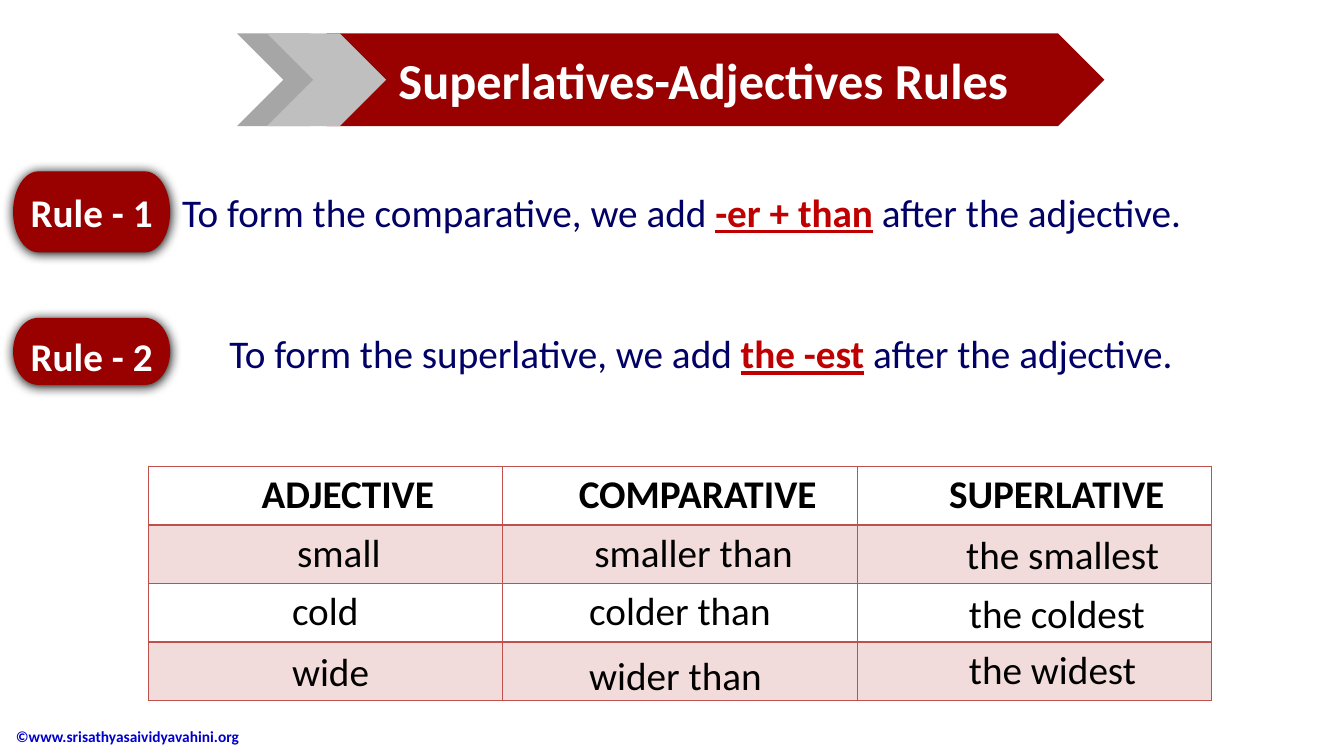
"""Build a slide on the rules for comparative and superlative adjectives."""
from lxml.etree import SubElement
from pptx import Presentation
from pptx.dml.color import RGBColor
from pptx.enum.shapes import MSO_SHAPE as Shape
from pptx.enum.text import MSO_ANCHOR as Anchor, PP_ALIGN as Align
from pptx.oxml.ns import qn
from pptx.util import Cm, Pt

COLORS = {"red": "990000", "accent": "C00000", "navy": "000066", "link": "0000CC",
          "white": "FFFFFF", "black": "000000", "border": "C0504D", "band": "F2DCDB",
          "gray": "A6A6A6", "silver": "BFBFBF"}
TITLE = "Superlatives-Adjectives Rules"
CREDIT = "©www.srisathyasaividyavahini.org"
RULES = [
    {"label": "Rule - 1", "badge": (4.32, 2.04), "text": (4.34, 4.62, 29.6),
     "parts": ["To form the comparative, we add ", "-er + than", " after the adjective."]},
    {"label": "Rule - 2", "badge": (8.01, 1.69), "text": (5.53, 8.18, 27.2),
     "parts": ["To form the superlative, we add ", "the -est", " after the adjective."]},
]
HEADERS = [("ADJECTIVE", 1.37), ("COMPARATIVE", 1.14), ("SUPERLATIVE", 1.37)]
WORD_ROWS = [
    [("small", 7.24, 13.18), ("smaller than", 14.73, 13.18), ("the smallest", 24.1, 13.24)],
    [("cold", 7.11, 14.64), ("colder than", 14.6, 14.64), ("the coldest", 24.17, 14.73)],
    [("wide", 7.11, 16.19), ("wider than", 14.6, 16.28), ("the widest", 24.17, 16.14)],
]
WORD_WIDTHS = [3.12, 5.66, 5.66]
TEXT_HEIGHT = 1.45
BANNER = [(Shape.CHEVRON, 5.97, 3, "gray"), (Shape.PENTAGON, 8.23, 19.6, "red"),
          (Shape.CHEVRON, 6.73, 3, "silver")]
BANNER_TOP, BANNER_HEIGHT = 0.84, 2.34
BODY = {"name": "Calibri", "size": Pt(28)}
BOLD = {**BODY, "bold": True}


def add_run(paragraph, text, color, style):
    run = paragraph.add_run()
    run.text = text
    for name, value in style.items():
        setattr(run.font, name, value)
    run.font.color.rgb = RGBColor.from_string(COLORS[color])


def add_text(slide, left, top, width, height, runs):
    box = slide.shapes.add_textbox(Cm(left), Cm(top), Cm(width), Cm(height))
    box.text_frame.word_wrap = True
    for run in runs:
        add_run(box.text_frame.paragraphs[0], *run)


def add_block(slide, kind, left, top, width, height, color):
    shape = slide.shapes.add_shape(kind, Cm(left), Cm(top), Cm(width), Cm(height))
    shape.shadow.inherit = False
    shape.fill.solid()
    shape.fill.fore_color.rgb = RGBColor.from_string(COLORS[color])
    shape.line.fill.background()
    return shape


def add_badge(slide, label, top, height):
    badge = add_block(slide, Shape.FLOWCHART_TERMINATOR, 0.33, top, 3.96, height, "red")
    effects = badge._element.spPr.find(qn("a:effectLst"))
    shadow = SubElement(effects, qn("a:outerShdw"), blurRad=str(Pt(8.5)),
                        dist=str(Pt(1)), dir="5400000", algn="ctr", rotWithShape="0")
    SubElement(shadow, qn("a:srgbClr"), val=COLORS["black"])
    frame = badge.text_frame
    frame.word_wrap = False
    frame.vertical_anchor = Anchor.TOP
    frame.paragraphs[0].alignment = Align.CENTER
    add_run(frame.paragraphs[0], label, "white", BOLD)


def set_borders(cell, widths):
    properties = cell._tc.get_or_add_tcPr()
    for position, (side, width) in enumerate(widths.items()):
        line = SubElement(properties, qn(f"a:{side}"), w=str(Pt(width)))
        properties.insert(position, line)
        SubElement(SubElement(line, qn("a:solidFill")), qn("a:srgbClr"), val=COLORS["border"])


def add_grid(slide):
    row_count = len(WORD_ROWS) + 1
    frame = slide.shapes.add_table(row_count, len(HEADERS), Cm(3.74), Cm(11.75),
                                   Cm(26.8), Cm(5.9))
    table = frame.table
    table.first_row = table.horz_banding = False
    for row in range(row_count):
        for column in range(len(HEADERS)):
            cell = table.cell(row, column)
            if row % 2:
                cell.fill.solid()
                cell.fill.fore_color.rgb = RGBColor.from_string(COLORS["band"])
            else:
                cell.fill.background()
            set_borders(cell, {"lnL": 1, "lnR": 1, "lnT": 2 if row == 1 else 1,
                               "lnB": 2 if row == 0 else 1})
    for column, (header, indent) in enumerate(HEADERS):
        cell = table.cell(0, column)
        cell.margin_left = Cm(indent)
        paragraph = cell.text_frame.paragraphs[0]
        paragraph.alignment = Align.CENTER
        add_run(paragraph, header, "black", BOLD)


def add_words(slide):
    for words in WORD_ROWS:
        for (word, left, top), width in zip(words, WORD_WIDTHS):
            add_text(slide, left, top, width, TEXT_HEIGHT, [(word, "black", BODY)])


def add_title(slide):
    for kind, left, width, color in BANNER:
        add_block(slide, kind, left, BANNER_TOP, width, BANNER_HEIGHT, color)
    title = slide.shapes.title
    title.left, title.top = Cm(8.22), Cm(BANNER_TOP)
    title.width, title.height = Cm(19.02), Cm(BANNER_HEIGHT)
    title.text_frame.vertical_anchor = Anchor.MIDDLE
    title.text_frame.paragraphs[0].alignment = Align.CENTER
    add_run(title.text_frame.paragraphs[0], TITLE, "white", {**BOLD, "size": Pt(36)})
    slide.shapes._spTree.append(title._element)


def main():
    presentation = Presentation()
    presentation.slide_width, presentation.slide_height = Cm(33.87), Cm(19.05)
    slide = presentation.slides.add_slide(presentation.slide_layouts[5])
    add_title(slide)
    for rule in RULES:
        add_badge(slide, rule["label"], *rule["badge"])
        before, ending, after = rule["parts"]
        add_text(slide, *rule["text"], TEXT_HEIGHT, [
            (before, "navy", BODY), (ending, "accent", {**BOLD, "underline": True}),
            (after, "navy", BODY)])
    add_grid(slide)
    add_words(slide)
    add_text(slide, 0.15, 18.19, 9, 0.8, [(CREDIT, "link", {**BOLD, "size": Pt(11)})])
    presentation.save("out.pptx")


if __name__ == "__main__":
    main()
